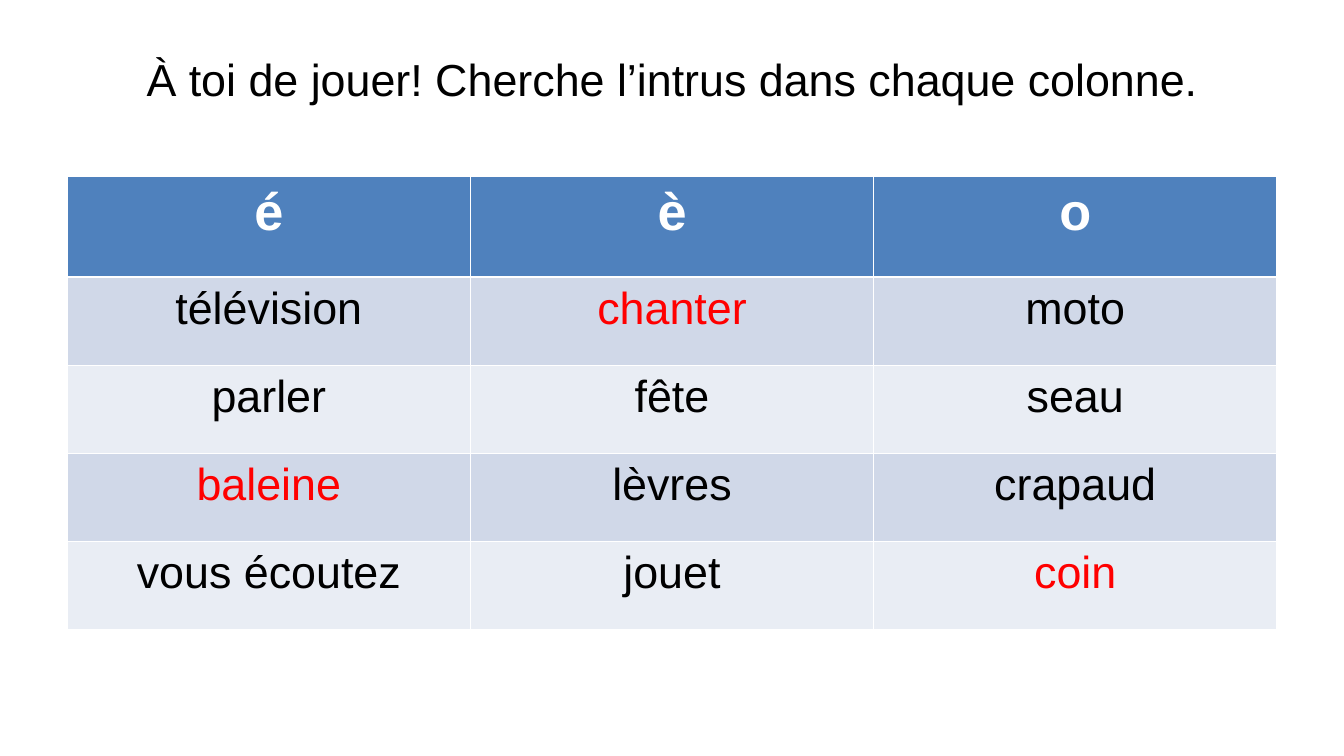
from pptx import Presentation
from pptx.dml.color import RGBColor
from pptx.enum.text import MSO_ANCHOR, PP_ALIGN
from pptx.util import Pt

CENTER = PP_ALIGN.CENTER
MIDDLE = MSO_ANCHOR.MIDDLE

BLACK = RGBColor(0x00, 0x00, 0x00)
WHITE = RGBColor(0xFF, 0xFF, 0xFF)
RED = RGBColor(0xFF, 0x00, 0x00)
HEADER_BLUE = RGBColor(0x4F, 0x81, 0xBD)
BAND_DARK = RGBColor(0xD0, 0xD8, 0xE8)
BAND_LIGHT = RGBColor(0xE9, 0xED, 0xF4)

FONT = "Arial"
LEFT, WIDTH = 36, 648
HEADER_HEIGHT, ROW_HEIGHT = 54, 47.2

WORDS = [
    ["é", "è", "o"],
    ["télévision", "chanter", "moto"],
    ["parler", "fête", "seau"],
    ["baleine", "lèvres", "crapaud"],
    ["vous écoutez", "jouet", "coin"],
]
ODD_ONES_OUT = {"baleine", "chanter", "coin"}


def format_paragraph(para, size, color, bold=False):
    para.alignment = CENTER
    para.font.name = FONT
    para.font.size = Pt(size)
    para.font.bold = bold
    para.font.color.rgb = color


deck = Presentation()
deck.slide_width, deck.slide_height = Pt(720), Pt(405)
page = deck.slides.add_slide(deck.slide_layouts[5])  # title only

# Title
title = page.shapes.title
title.left, title.top = Pt(LEFT), Pt(16.5)
title.width, title.height = Pt(WIDTH), Pt(51)
title.text_frame.text = "À toi de jouer! Cherche l’intrus dans chaque colonne."
title.text_frame.vertical_anchor = MIDDLE
format_paragraph(title.text_frame.paragraphs[0], 24, BLACK)

# Word table; the default table style draws the white borders
row_count, column_count = len(WORDS), len(WORDS[0])
table_height = HEADER_HEIGHT + ROW_HEIGHT * (row_count - 1)
table = page.shapes.add_table(
    row_count, column_count, Pt(LEFT), Pt(94.5), Pt(WIDTH), Pt(table_height)
).table

for row_index, row_words in enumerate(WORDS):
    is_header = row_index == 0
    table.rows[row_index].height = Pt(HEADER_HEIGHT if is_header else ROW_HEIGHT)
    band = BAND_DARK if row_index % 2 else BAND_LIGHT
    for column_index, word in enumerate(row_words):
        cell = table.cell(row_index, column_index)
        cell.text = word
        cell.fill.solid()
        cell.fill.fore_color.rgb = HEADER_BLUE if is_header else band
        para = cell.text_frame.paragraphs[0]
        if is_header:
            format_paragraph(para, 28, WHITE, bold=True)
        else:
            format_paragraph(para, 24, RED if word in ODD_ONES_OUT else BLACK)

deck.save("out.pptx")
